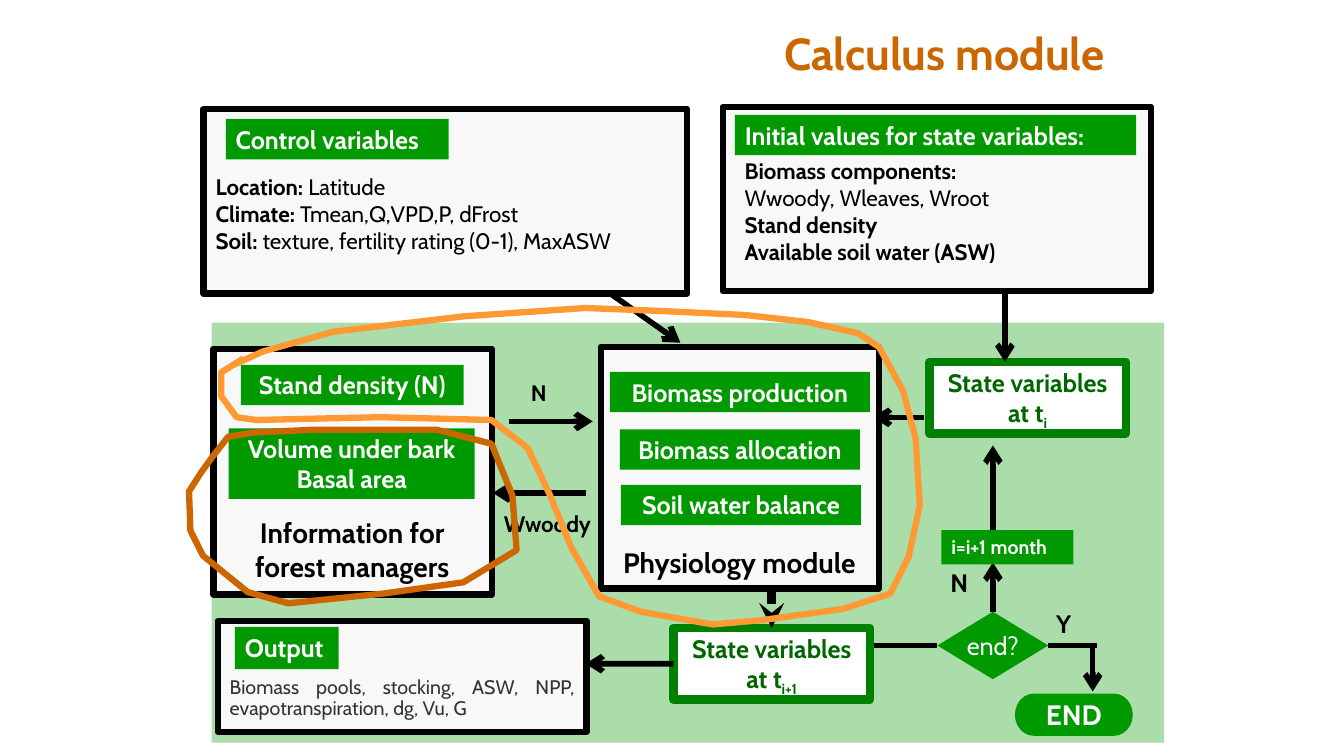
from lxml import etree
from pptx import Presentation
from pptx.dml.color import RGBColor
from pptx.enum.shapes import MSO_CONNECTOR, MSO_SHAPE
from pptx.enum.text import MSO_ANCHOR, MSO_AUTO_SIZE, PP_ALIGN
from pptx.oxml.ns import qn
from pptx.util import Pt

RECTANGLE = MSO_SHAPE.RECTANGLE
LEFT, CENTER, JUSTIFY = PP_ALIGN.LEFT, PP_ALIGN.CENTER, PP_ALIGN.JUSTIFY
TOP, MIDDLE = MSO_ANCHOR.TOP, MSO_ANCHOR.MIDDLE
FONT = "Cabin"
GREEN, BORDER_GREEN, TEXT_GREEN = "009900", "008000", "006600"
WHITE, BLACK, PANEL_GRAY = "FFFFFF", "000000", "F8F8F8"
ORANGE, BROWN = "FF9933", "CC6600"

MODEL_LOOP = [
    (165.6, 260.6), (187.9, 251.3), (238.3, 236.9), (331.2, 226.1), (417.6, 220.3),
    (468.7, 221.8), (532.1, 225.4), (576.7, 230.4), (613.4, 237.6), (627.8, 247.7),
    (645.1, 278.6), (654.5, 313.2), (656.6, 360.7), (649.4, 398.2), (635.8, 424.1),
    (601.9, 434.9), (543.6, 442.8), (509, 445.7), (457.9, 437), (428.4, 425.5),
    (408.2, 391), (393.1, 353.5), (376.6, 319.7), (350.6, 300.2), (272.2, 298.1),
    (182.9, 300.2), (169.2, 298.1), (158.4, 283), (157.7, 265.7), (174.2, 256.3)]
MANAGER_LOOP = [
    (151.9, 326.2), (163.4, 311.8), (181.4, 308.9), (223.9, 307.4), (270.7, 307.4),
    (311.8, 307.4), (350.6, 316.8), (366.5, 354.2), (368.6, 393.1), (331.2, 416.2),
    (274.3, 424.1), (205.9, 431.3), (177.1, 423.4), (144.7, 397.4), (136.1, 379.4),
    (134.6, 351.4), (144, 337)]


def color(value):
    return RGBColor.from_string(value)


def write(shape, paragraphs, size, text_color, bold=True, align=LEFT, anchor=TOP, wrap=True):
    """Fill a text frame; a paragraph is a string or a list of (text, bold, baseline)."""
    frame = shape.text_frame
    frame.word_wrap = wrap
    frame.vertical_anchor = anchor
    for index, content in enumerate(paragraphs):
        paragraph = frame.add_paragraph() if index else frame.paragraphs[0]
        paragraph.alignment = align
        paragraph.font.name = FONT
        paragraph.font.size = Pt(size)
        paragraph.font.color.rgb = color(text_color)
        if isinstance(content, str):
            paragraph.font.bold = bold
            paragraph.add_run().text = content
            continue
        for text, run_bold, baseline in content:
            run = paragraph.add_run()
            run.text = text
            run.font.bold = run_bold
            if baseline:
                run.font._element.set("baseline", str(baseline * 1000))


def add_box(slide, box, fill, line=None, width=4.5, kind=RECTANGLE):
    shape = slide.shapes.add_shape(kind, *map(Pt, box))
    shape.shadow.inherit = False
    shape.fill.solid()
    shape.fill.fore_color.rgb = color(fill)
    if line:
        shape.line.color.rgb = color(line)
        shape.line.width = Pt(width)
    else:
        shape.line.fill.background()
    return shape


def add_label(slide, box, paragraphs, size=18, align=LEFT):
    label = add_box(slide, box, GREEN)
    write(label, paragraphs, size, WHITE, align=align, wrap=False)
    label.text_frame.auto_size = MSO_AUTO_SIZE.SHAPE_TO_FIT_TEXT


def add_text(slide, box, paragraphs, size, text_color=BLACK, **options):
    text_box = slide.shapes.add_textbox(*map(Pt, box))
    write(text_box, paragraphs, size, text_color, **options)
    return text_box


def add_panel(slide, box):
    add_box(slide, box, PANEL_GRAY, BLACK)


def add_line(slide, start, end, arrow="arrow", width=4):
    connector = slide.shapes.add_connector(MSO_CONNECTOR.STRAIGHT, *map(Pt, start + end))
    connector.line.color.rgb = color(BLACK)
    connector.line.width = Pt(width)
    if arrow:
        line = connector.line._get_or_add_ln()
        etree.SubElement(line, qn("a:tailEnd"), type=arrow)
    etree.SubElement(connector._element.spPr, qn("a:effectLst"))
    return connector


def add_loop(slide, points, line, close):
    builder = slide.shapes.build_freeform(*points[0], scale=Pt(1))
    builder.add_line_segments(points[1:], close=close)
    loop = builder.convert_to_shape()
    loop.shadow.inherit = False
    loop.fill.background()
    loop.line.color.rgb = color(line)
    loop.line.width = Pt(4.5)


def add_title(slide, box):
    title = slide.shapes.title
    title.left, title.top, title.width, title.height = map(Pt, box)
    write(title, ["Calculus module"], 32, BROWN, align=CENTER)


def add_state(slide, left, top, subscript):
    state = add_box(slide, (left, top, 140.4, 51.1), WHITE, BORDER_GREEN, 6)
    write(state, ["State variables", [("at t", True, 0), (subscript, True, -25)]],
          18, TEXT_GREEN, align=CENTER, wrap=False)
    state.text_frame.auto_size = MSO_AUTO_SIZE.SHAPE_TO_FIT_TEXT
    return state


def add_month_loop(slide, left, top, next_state):
    """Place the end test at left, top with its branches and the arrows of next_state."""
    decision = add_box(slide, (left, top, 79.2, 48.2), GREEN,
                       kind=MSO_SHAPE.FLOWCHART_DECISION)
    write(decision, ["end?"], 18, WHITE, False, CENTER, MIDDLE, False)
    middle, center = top + 24.1, left + 39.6
    add_line(slide, (624.2, middle), (left, middle), None).end_connect(decision, 1)
    add_line(slide, (center, top), (center, top - 35.2)).begin_connect(decision, 0)
    add_line(slide, (center, top - 55.4), (center, top - 118.8))
    add_text(slide, (left + 2.2, top - 35.2, 23.8, 28.8), ["N"], 18)
    add_label(slide, (left + 2.9, top - 58.3, 94.3, 24.5), ["i=i+1 month"], 14)

    add_text(slide, (left + 77.8, top - 5.7, 36, 28.8), ["Y"], 18)
    add_line(slide, (left + 79.2, middle), (left + 113.8, middle), None).begin_connect(decision, 3)
    add_line(slide, (left + 110.9, middle), (left + 110.9, top + 56.9))
    end = add_box(slide, (left + 55.4, top + 58.4, 84.2, 30.2), GREEN,
                  kind=MSO_SHAPE.FLOWCHART_TERMINATOR)
    write(end, ["END"], 20, WHITE, True, CENTER, MIDDLE, False)

    add_line(slide, (551.2, 420.5), (551.2, 448.6), "stealth", 6).end_connect(next_state, 0)
    add_line(slide, (481, 474.1), (418.3, 474.1)).begin_connect(next_state, 1)


def add_control_variables(slide, box):
    left, top, width, height = box
    add_panel(slide, box)
    add_label(slide, (left + 15.9, top + 7.2, 159.1, 28.8), ["Control variables"])
    rows = [("Location: ", "Latitude"), ("Climate: ", "Tmean,Q,VPD,P, dFrost"),
            ("Soil: ", "texture, fertility rating (0-1), MaxASW")]
    add_text(slide, (left + 1.5, top + 42.4, 342, 65.5),
             [[(name, True, 0), (value, False, 0)] for name, value in rows], 16)


def add_initial_values(slide, box):
    left, top, width, height = box
    add_panel(slide, box)
    add_label(slide, (left + 8.7, top + 5.8, 286.6, 28.8), ["Initial values for state variables:"])
    add_text(slide, (left + 8.7, top + 32.4, 232.6, 104.4),
             [[("Biomass components: ", True, 0), ("Wwoody, Wleaves, Wroot", False, 0)],
              "Stand density", "Available soil water (ASW)"], 16)


def add_manager_information(slide, box):
    left, top, width, height = box
    add_panel(slide, box)
    add_label(slide, (left + 19.5, top + 11.5, 159.1, 28.8), ["Stand density (N)"], align=CENTER)
    add_label(slide, (left + 10.8, top + 56.9, 175.7, 50.4),
              ["Volume under bark", "Basal area"], align=CENTER)
    add_text(slide, (left - 14.4, top + 115.9, 226.8, 55.4),
             ["Information for", "forest managers"], 20, align=CENTER)


def add_physiology(slide, box):
    left, top, width, height = box
    add_panel(slide, box)
    for name, offset, drop, label_width in [("Biomass production", 6.5, 18, 185.8),
                                            ("Biomass allocation", 13.7, 59, 171.4),
                                            ("Soil water balance", 14.4, 98.6, 171.4)]:
        add_label(slide, (left + offset, top + drop, label_width, 28.8), [name], align=CENTER)
    add_text(slide, (left - 14.4, top + 138.2, 226.8, 31), ["Physiology module"], 20, align=CENTER)


def add_output(slide, box):
    left, top, width, height = box
    add_panel(slide, box)
    add_label(slide, (left + 12.3, top + 4.3, 74.2, 30.2), ["Output"])
    pools = add_text(slide, (left + 1.5, top + 36.7, 260.6, 38.2),
                     ["Biomass pools, stocking, ASW, NPP, evapotranspiration, dg, Vu, G"],
                     14, "333333", bold=False, align=JUSTIFY)
    pools.text_frame.paragraphs[0].line_spacing = 0.9


def main():
    presentation = Presentation()
    presentation.slide_width, presentation.slide_height = Pt(960), Pt(540)
    slide = presentation.slides.add_slide(presentation.slide_layouts[5])
    add_title(slide, (517.7, 15.1, 313.9, 46.1))
    backdrop = add_box(slide, (151.2, 230.4, 680.4, 300.2), GREEN)
    fill = backdrop._element.spPr.find(qn("a:solidFill"))
    etree.SubElement(fill[0], qn("a:alpha"), val="33000")

    add_state(slide, 663.8, 258.5, "i")
    next_state = add_state(slide, 481, 448.6, "i+1")
    add_month_loop(slide, 669.6, 437, next_state)
    for start, end in [((660.2, 298.1), (623.5, 298.1)), ((409, 190.8), (486, 244.8)),
                       ((717.8, 185), (717.8, 258.5)), ((418.3, 352.1), (352.1, 352.1)),
                       ((363.6, 301), (423.4, 301))]:
        add_line(slide, start, end)

    add_control_variables(slide, (145.4, 77.8, 345.6, 131.8))
    add_initial_values(slide, (516.2, 76.3, 306, 131.8))
    add_manager_information(slide, (152.6, 249.1, 198.7, 175.7))
    add_physiology(slide, (429.1, 247.7, 198.7, 172.8))
    add_output(slide, (155.5, 443.5, 263.5, 79.2))
    add_text(slide, (352.8, 360.7, 90.7, 26.6), ["Wwoody"], 16)
    add_text(slide, (372.2, 267.1, 39.6, 26.6), ["N"], 16)
    add_loop(slide, MODEL_LOOP, ORANGE, False)
    add_loop(slide, MANAGER_LOOP, BROWN, True)
    presentation.save("out.pptx")


if __name__ == "__main__":
    main()
